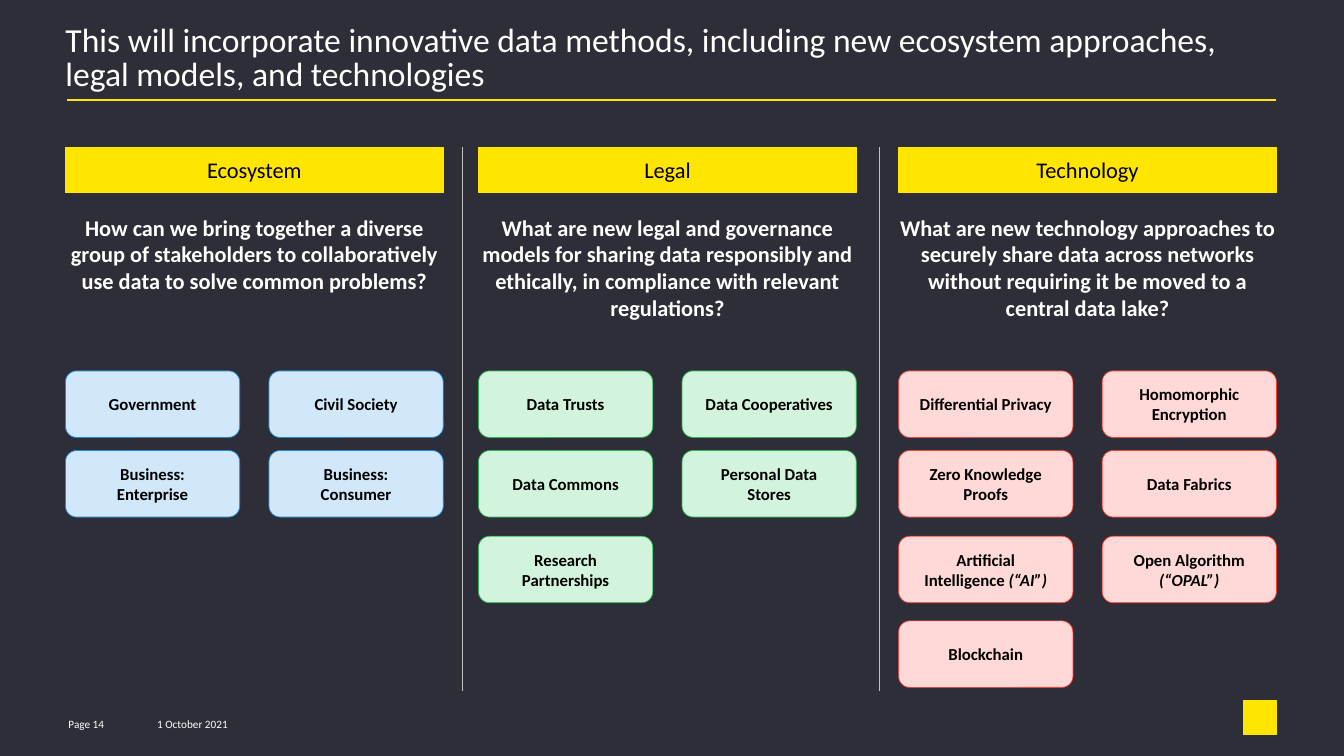
from typing import NamedTuple

from pptx import Presentation
from pptx import util as u
from pptx.dml.color import RGBColor
from pptx.enum import shapes, text
from pptx.oxml.ns import qn
from lxml import etree

PX = 9144
FONT = "Calibri"
NAVY = RGBColor(0x2E, 0x2E, 0x38)
YELLOW = RGBColor(0xFF, 0xE6, 0x00)
WHITE = RGBColor(0xFF, 0xFF, 0xFF)
BLACK = RGBColor(0x00, 0x00, 0x00)
GREY = RGBColor(0xBF, 0xBF, 0xBF)
PALE_BLUE = RGBColor(0xD0, 0xE8, 0xFA)
BLUE = RGBColor(0x18, 0x8C, 0xE5)
PALE_GREEN = RGBColor(0xD2, 0xF4, 0xDC)
GREEN = RGBColor(0x2D, 0xB7, 0x57)
PALE_RED = RGBColor(0xFF, 0xD9, 0xD7)
RED = RGBColor(0xFF, 0x41, 0x36)

COLUMN_W = 375
CARD_W, CARD_H = 173, 66
CARD_STEP = 202
ROW_TOPS = (368, 447, 532, 616)


class Card(NamedTuple):
    label: str
    note: str = ""


class Column(NamedTuple):
    left: int
    heading: str
    question: str
    fill: RGBColor
    line: RGBColor
    cards: tuple[Card, ...]


COLUMNS = (
    Column(65, "Ecosystem",
           "How can we bring together a diverse group of stakeholders to "
           "collaboratively use data to solve common problems?",
           PALE_BLUE, BLUE,
           (Card("Government"), Card("Civil Society"),
            Card("Business: Enterprise"), Card("Business: Consumer"))),
    Column(475, "Legal",
           "What are new legal and governance models for sharing data responsibly "
           "and ethically, in compliance with relevant regulations?",
           PALE_GREEN, GREEN,
           (Card("Data Trusts"), Card("Data Cooperatives"),
            Card("Data Commons"), Card("Personal Data Stores"),
            Card("Research Partnerships"))),
    Column(892, "Technology",
           "What are new technology approaches to securely share data across "
           "networks without requiring it be moved to a central data lake?",
           PALE_RED, RED,
           (Card("Differential Privacy"), Card("Homomorphic Encryption"),
            Card("Zero Knowledge Proofs"), Card("Data Fabrics"),
            Card("Artificial Intelligence ", "(“AI”)"),
            Card("Open Algorithm ", "(“OPAL”)"), Card("Blockchain"))),
)


def px(*values: int) -> list[u.Emu]:
    return [u.Emu(v * PX) for v in values]


def write(sp, content: Card, size: int, color: RGBColor, bold: bool = False,
          align=text.PP_ALIGN.LEFT, anchor=text.MSO_ANCHOR.TOP,
          inset: tuple[int, int] = (0, 0)):
    tf = sp.text_frame
    tf.word_wrap = True
    tf.auto_size = text.MSO_AUTO_SIZE.NONE
    tf.vertical_anchor = anchor
    tf.margin_left = tf.margin_right = u.Emu(inset[0] * PX)
    tf.margin_top = tf.margin_bottom = u.Emu(inset[1] * PX)
    p = tf.paragraphs[0]
    p.alignment = align
    p.font.name, p.font.size, p.font.bold = FONT, u.Pt(size), bold
    p.font.color.rgb = color
    p.add_run().text = content.label
    if content.note:
        r = p.add_run()
        r.text = content.note
        r.font.italic = True
    return p


def add_box(s, kind, box: tuple[int, int, int, int], fill: RGBColor,
            line: RGBColor, weight: float):
    sp = s.shapes.add_shape(kind, *px(*box))
    sp.shadow.inherit = False
    sp.fill.solid()
    sp.fill.fore_color.rgb = fill
    sp.line.color.rgb = line
    sp.line.width = u.Pt(weight)
    return sp


def add_line(s, ends: tuple[int, int, int, int], color: RGBColor,
             weight: float) -> None:
    cx = s.shapes.add_connector(shapes.MSO_CONNECTOR.STRAIGHT, *px(*ends))
    cx.line.color.rgb = color
    cx.line.width = u.Pt(weight)
    etree.SubElement(cx._element.spPr, qn("a:effectLst"))


def add_column(s, col: Column) -> None:
    center, middle = text.PP_ALIGN.CENTER, text.MSO_ANCHOR.MIDDLE
    sp = add_box(s, shapes.MSO_SHAPE.RECTANGLE, (col.left, 146, COLUMN_W, 45),
                 YELLOW, YELLOW, 0.75)
    write(sp, Card(col.heading), 16, BLACK, align=center, anchor=middle)
    sp = s.shapes.add_textbox(*px(col.left, 212, COLUMN_W, 153))
    write(sp, Card(col.question), 16, WHITE, bold=True, align=center)
    for i, card in enumerate(col.cards):
        row, side = divmod(i, 2)
        box = (col.left + side * CARD_STEP, ROW_TOPS[row], CARD_W, CARD_H)
        sp = add_box(s, shapes.MSO_SHAPE.ROUNDED_RECTANGLE, box,
                     col.fill, col.line, 0.5)
        write(sp, card, 12, BLACK, bold=True, align=center, anchor=middle,
              inset=(16, 8))


def main() -> None:
    prs = Presentation()
    prs.slide_width, prs.slide_height = px(1334, 750)
    s = prs.slides.add_slide(prs.slide_layouts[5])
    s.background.fill.solid()
    s.background.fill.fore_color.rgb = NAVY

    title = s.shapes.title
    title.left, title.top, title.width, title.height = px(65, 25, 1201, 72)
    p = write(title, Card("This will incorporate innovative data methods, including "
                          "new ecosystem approaches, legal models, and technologies"),
              24, WHITE)
    p.line_spacing = 0.85
    add_line(s, (67, 99, 1267, 99), YELLOW, 1.5)

    for col in COLUMNS:
        add_column(s, col)
    for x in (459, 873):
        add_line(s, (x, 146, x, 686), GREY, 0.75)

    for left, width, label in ((68, 73, "Page 14"), (156, 130, "1 October 2021")):
        sp = s.shapes.add_textbox(*px(left, 708, width, 20))
        write(sp, Card(label), 8, WHITE, anchor=text.MSO_ANCHOR.MIDDLE)
    add_box(s, shapes.MSO_SHAPE.RECTANGLE, (1234, 695, 33, 34), YELLOW, YELLOW, 0.75)

    prs.save("out.pptx")


if __name__ == "__main__":
    main()
